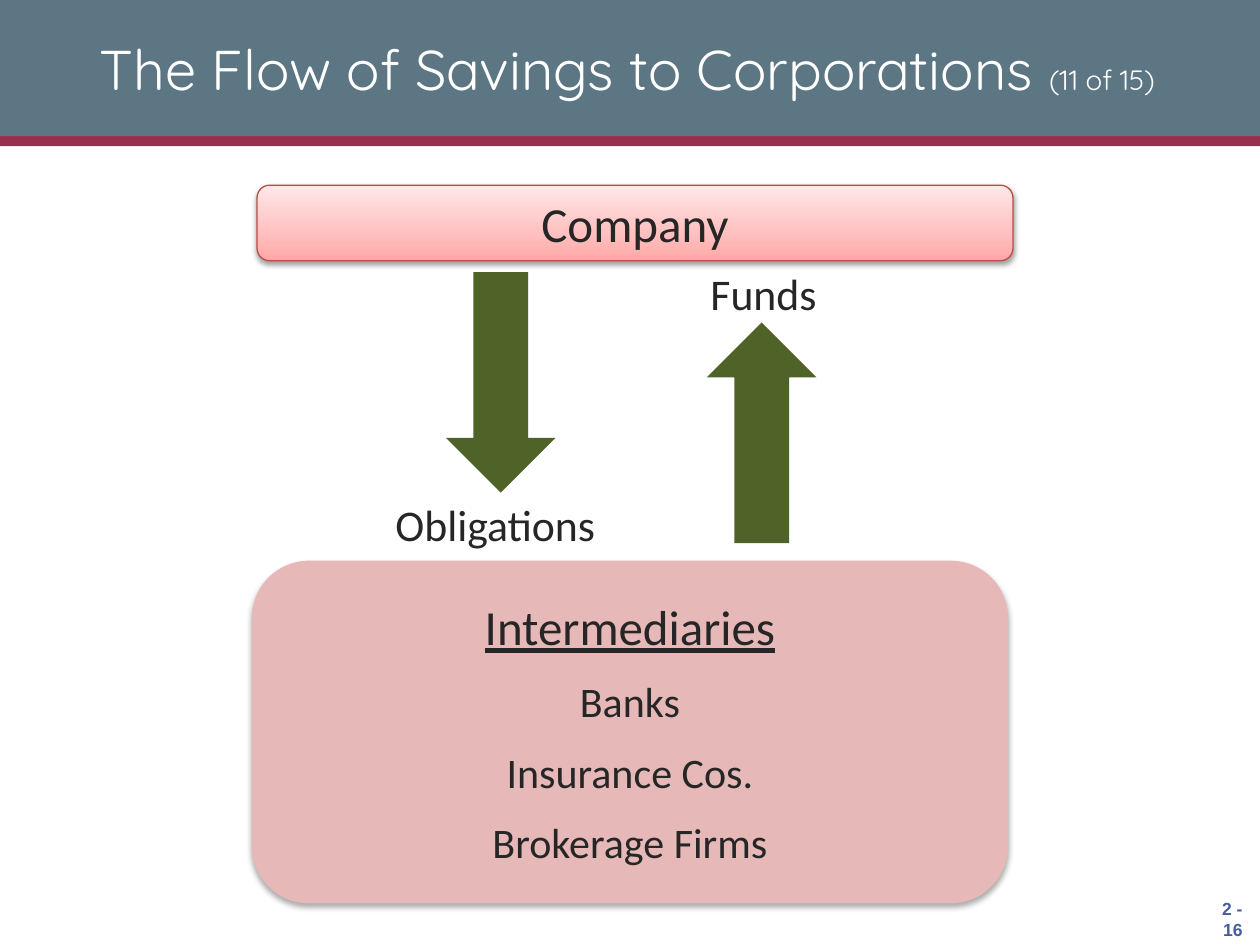
import copy

import pptx
import pptx.dml.color
import pptx.enum.shapes
import pptx.enum.text
import pptx.oxml
import pptx.oxml.ns
import pptx.util
from pptx.util import Inches, Pt

SHAPE = pptx.enum.shapes.MSO_SHAPE
ALIGN = pptx.enum.text.PP_ALIGN
ANCHOR = pptx.enum.text.MSO_ANCHOR


def color(value):
    return pptx.dml.color.RGBColor.from_string(value)


class SlideBuilder:
    INK = "262626"
    ARROW = "4F6228"
    BODY = {"name": "Calibri", "size": Pt(28), "color": INK}
    ITEM = {**BODY, "size": Pt(24)}
    LABEL = {**BODY, "size": Pt(25)}
    TITLE = {"name": "Quicksand", "size": Pt(32), "color": "FFFFFF"}
    NUMBER = {"name": "Arial", "size": Pt(10), "color": "455EA0", "bold": True}

    def __init__(self, slide):
        self.slide = slide

    def shape(self, kind, at, fill=None, rotation=0):
        shape = self.slide.shapes.add_shape(kind, *map(Inches, at))
        shape.shadow.inherit = False
        shape.rotation = rotation
        shape.line.fill.background()
        if fill:
            shape.fill.solid()
            shape.fill.fore_color.rgb = color(fill)
        return shape

    def gradient(self, shape, stops):
        """Fill the shape from bottom to top with (position, colour) stops."""
        shape.fill.gradient()
        shape.fill.gradient_angle = 90
        stop_list = shape._element.spPr.find(".//" + pptx.oxml.ns.qn("a:gsLst"))
        while len(stop_list) < len(stops):
            stop_list.append(copy.deepcopy(stop_list[0]))
        for stop, (position, value) in zip(shape.fill.gradient_stops, stops):
            stop.position = position
            stop.color.rgb = color(value)

    def drop_shadow(self, shape, opacity, blur, distance):
        """Cast a black shadow straight down; opacity is in percent."""
        effects = shape._element.spPr.find(pptx.oxml.ns.qn("a:effectLst"))
        effects.append(pptx.oxml.parse_xml(
            f'<a:outerShdw {pptx.oxml.ns.nsdecls("a")} blurRad="{Pt(blur)}" '
            f'dist="{Pt(distance)}" dir="5400000" rotWithShape="0">'
            f'<a:srgbClr val="000000"><a:alpha val="{opacity * 1000}"/>'
            '</a:srgbClr></a:outerShdw>'))

    def set_text(self, shape, paragraphs, align=ALIGN.CENTER, anchor=ANCHOR.MIDDLE,
                 wrap=True, gap=0):
        """Fill the shape with paragraphs, each a list of (text, format) spans."""
        frame = shape.text_frame
        frame.word_wrap = wrap
        frame.vertical_anchor = anchor
        for index, spans in enumerate(paragraphs):
            para = frame.add_paragraph() if index else frame.paragraphs[0]
            para.alignment = align
            if index and gap:
                para.space_before = Pt(gap)
            for text, style in spans:
                span = para.add_run()
                span.text = text
                for name, value in style.items():
                    if name == "color":
                        span.font.color.rgb = color(value)
                    else:
                        setattr(span.font, name, value)

    def text(self, at, spans, **layout):
        box = self.slide.shapes.add_textbox(*map(Inches, at))
        self.set_text(box, [spans], **layout)

    def label(self, at, text):
        self.text(at, [(text, self.LABEL)], align=ALIGN.LEFT,
                  anchor=ANCHOR.TOP, wrap=False)


def main():
    deck = pptx.Presentation()
    deck.slide_width, deck.slide_height = Inches(10), Inches(7.5)
    page = SlideBuilder(deck.slides.add_slide(deck.slide_layouts[6]))

    page.shape(SHAPE.RECTANGLE, (0, 1.08, 10, 0.08), "992D4F")
    page.shape(SHAPE.RECTANGLE, (0, 0, 10, 1.08), "5C7683")
    page.text((9.46, 7.08, 0.5, 0.42), [("2 - 16", page.NUMBER)],
              align=ALIGN.RIGHT, wrap=False)
    page.text((0.25, 0.08, 9.46, 0.92), [
        ("The Flow of Savings to Corporations ", page.TITLE),
        ("(11 of 15)", {**page.TITLE, "size": Pt(16)})])

    company = page.shape(SHAPE.ROUNDED_RECTANGLE, (2.04, 1.47, 6, 0.6))
    page.gradient(company, [(0, "FFA6A5"), (0.35, "FFC0BF"), (1, "FFE7E7")])
    company.line.color.rgb = color("BF4C48")
    company.line.width = Pt(0.75)
    page.drop_shadow(company, 38, 3.1, 1.6)
    page.set_text(company, [[("Company", page.BODY)]])

    intermediaries = page.shape(SHAPE.ROUNDED_RECTANGLE, (2, 4.45, 6, 2.72), "E6B9B8")
    page.drop_shadow(intermediaries, 32, 3.5, 2.2)
    items = ["Banks", "Insurance Cos.", "Brokerage Firms"]
    page.set_text(intermediaries,
                  [[("Intermediaries", {**page.BODY, "underline": True})],
                   *([(item, page.ITEM)] for item in items)], gap=11.5)

    page.label((3.04, 3.9, 1.87, 0.54), "Obligations")
    page.shape(SHAPE.DOWN_ARROW, (5.61, 2.56, 0.87, 1.75), page.ARROW, rotation=180)
    page.label((5.54, 2.07, 1.09, 0.54), "Funds")
    page.shape(SHAPE.DOWN_ARROW, (3.54, 2.16, 0.87, 1.75), page.ARROW)

    deck.save("out.pptx")


if __name__ == "__main__":
    main()
